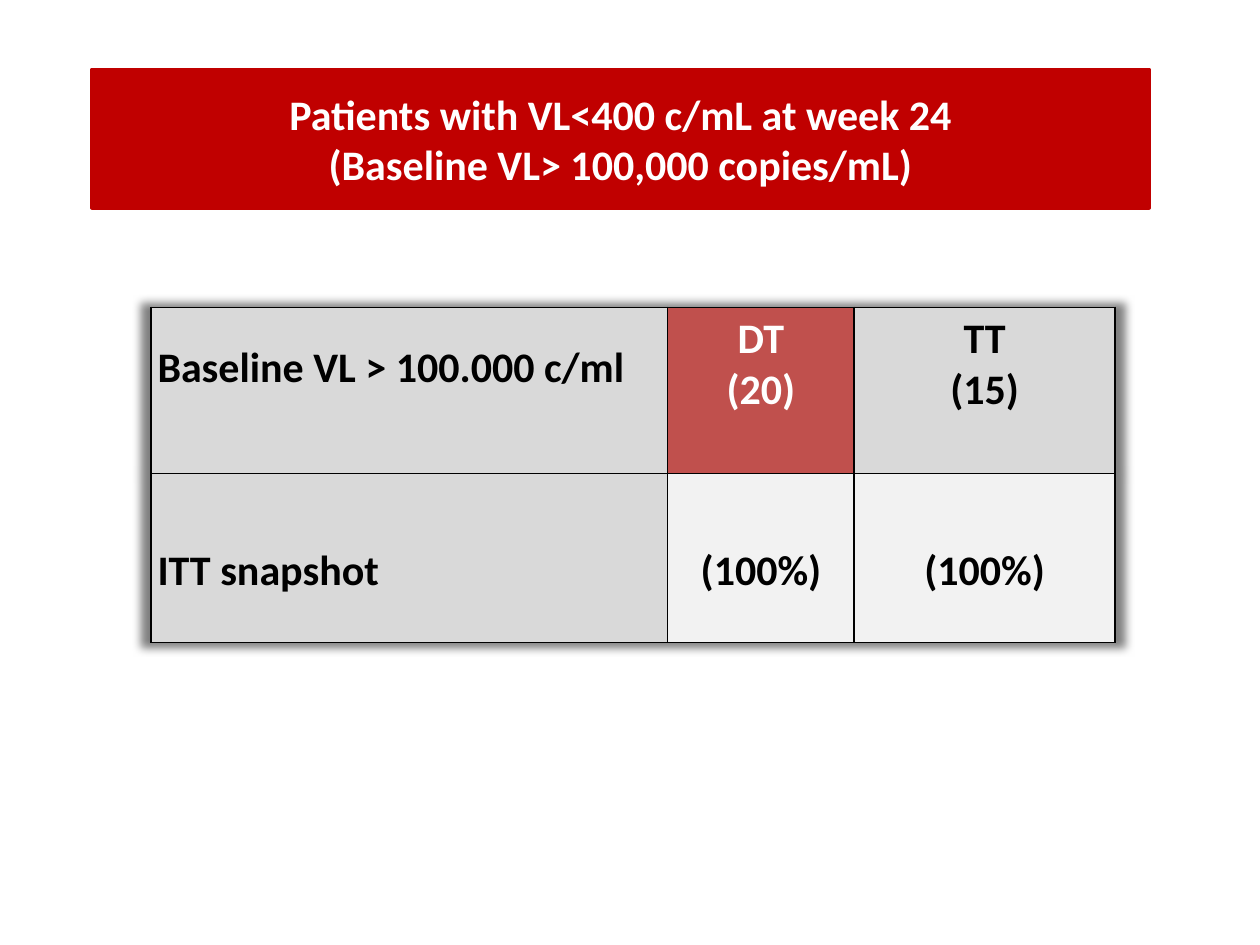
from dataclasses import dataclass

from lxml.etree import SubElement
from pptx import Presentation
from pptx.dml.color import RGBColor
from pptx.enum.text import MSO_ANCHOR, MSO_AUTO_SIZE, PP_ALIGN
from pptx.oxml import parse_xml
from pptx.oxml.ns import nsdecls, qn
from pptx.table import Table, _Cell
from pptx.text.text import TextFrame
from pptx.util import Inches, Pt

RED, ACCENT, BLACK, WHITE = "C00000", "C0504D", "000000", "FFFFFF"
GREY, PALE = "D9D9D9", "F2F2F2"


@dataclass
class CellStyle:
    """Text and look of one table cell."""

    text: str
    fill: str
    color: str = BLACK
    align: PP_ALIGN = PP_ALIGN.CENTER
    anchor: MSO_ANCHOR = MSO_ANCHOR.MIDDLE
    spacing: float = 1.5
    margins: tuple[float, float, float, float] = (0.05, 0, 0.05, 0)


def rgb(value: str) -> RGBColor:
    """Turn a hex string into a colour."""
    return RGBColor.from_string(value)


def write_text(frame: TextFrame, text: str, color: str, align: PP_ALIGN, spacing: float) -> None:
    """Set bold 24 point Calibri text."""
    frame.text = text
    for paragraph in frame.paragraphs:
        paragraph.alignment = align
        paragraph.line_spacing = spacing
        for run in paragraph.runs:
            font = run.font
            font.name, font.size, font.bold = "Calibri", Pt(24), True
            font.color.rgb = rgb(color)


def add_borders(cell: _Cell) -> None:
    """Outline a cell with black one-point lines."""
    properties = cell._tc.get_or_add_tcPr()
    for side in ("a:lnL", "a:lnR", "a:lnT", "a:lnB"):
        line = SubElement(properties, qn(side), w=str(Pt(1)))
        SubElement(SubElement(line, qn("a:solidFill")), qn("a:srgbClr"), val=BLACK)


def draw_cell(cell: _Cell, style: CellStyle) -> None:
    """Apply a style to a table cell."""
    add_borders(cell)
    cell.fill.solid()
    cell.fill.fore_color.rgb = rgb(style.fill)
    cell.vertical_anchor = style.anchor
    left, top, right, bottom = (Inches(margin) for margin in style.margins)
    cell.margin_left, cell.margin_top = left, top
    cell.margin_right, cell.margin_bottom = right, bottom
    write_text(cell.text_frame, style.text, style.color, style.align, style.spacing)


def add_table_shadow(table: Table) -> None:
    """Give the table a soft shadow on all sides."""
    table._tbl.tblPr.insert(0, parse_xml(
        f'<a:effectLst {nsdecls("a")}><a:outerShdw blurRad="63500" sx="102000" sy="102000" '
        'algn="ctr" rotWithShape="0"><a:srgbClr val="000000"><a:alpha val="50000"/>'
        "</a:srgbClr></a:outerShdw></a:effectLst>"))


def main() -> None:
    """Build the slide with its title banner and results table."""
    presentation = Presentation()
    presentation.slide_width, presentation.slide_height = Inches(10), Inches(7.5)
    slide = presentation.slides.add_slide(presentation.slide_layouts[5])

    title = slide.shapes.title
    title.left, title.top = Inches(0.73), Inches(0.55)
    title.width, title.height = Inches(8.39), Inches(1.1)
    title.fill.solid()
    title.fill.fore_color.rgb = rgb(RED)
    title.line.color.rgb = rgb(RED)
    title.line.width = Pt(2)
    title.text_frame.auto_size = MSO_AUTO_SIZE.NONE
    title.text_frame.vertical_anchor = MSO_ANCHOR.MIDDLE
    write_text(title.text_frame,
               "Patients with VL<400 c/mL at week 24\n(Baseline VL> 100,000 copies/mL)",
               WHITE, PP_ALIGN.CENTER, 1)

    heading = {"anchor": MSO_ANCHOR.TOP, "spacing": 1, "margins": (0.06, 0.05, 0.06, 0.05)}
    rows = [
        [CellStyle("Baseline VL > 100.000 c/ml", GREY, align=PP_ALIGN.LEFT,
                   margins=(0.05, 0, 0.05, 0.56)),
         CellStyle("DT\n(20)", ACCENT, WHITE, **heading),
         CellStyle("TT\n(15)", GREY, **heading)],
        [CellStyle("ITT snapshot", GREY, align=PP_ALIGN.LEFT),
         CellStyle("(100%)", PALE),
         CellStyle("(100%)", PALE)],
    ]
    table = slide.shapes.add_table(
        2, 3, Inches(1.2), Inches(2.44), Inches(7.65), Inches(2.66)).table
    for column, width in zip(table.columns, (4.1, 1.48, 2.07)):
        column.width = Inches(width)
    for row, height, styles in zip(table.rows, (1.32, 1.34), rows):
        row.height = Inches(height)
        for cell, style in zip(row.cells, styles):
            draw_cell(cell, style)
    add_table_shadow(table)

    presentation.save("out.pptx")


if __name__ == "__main__":
    main()
